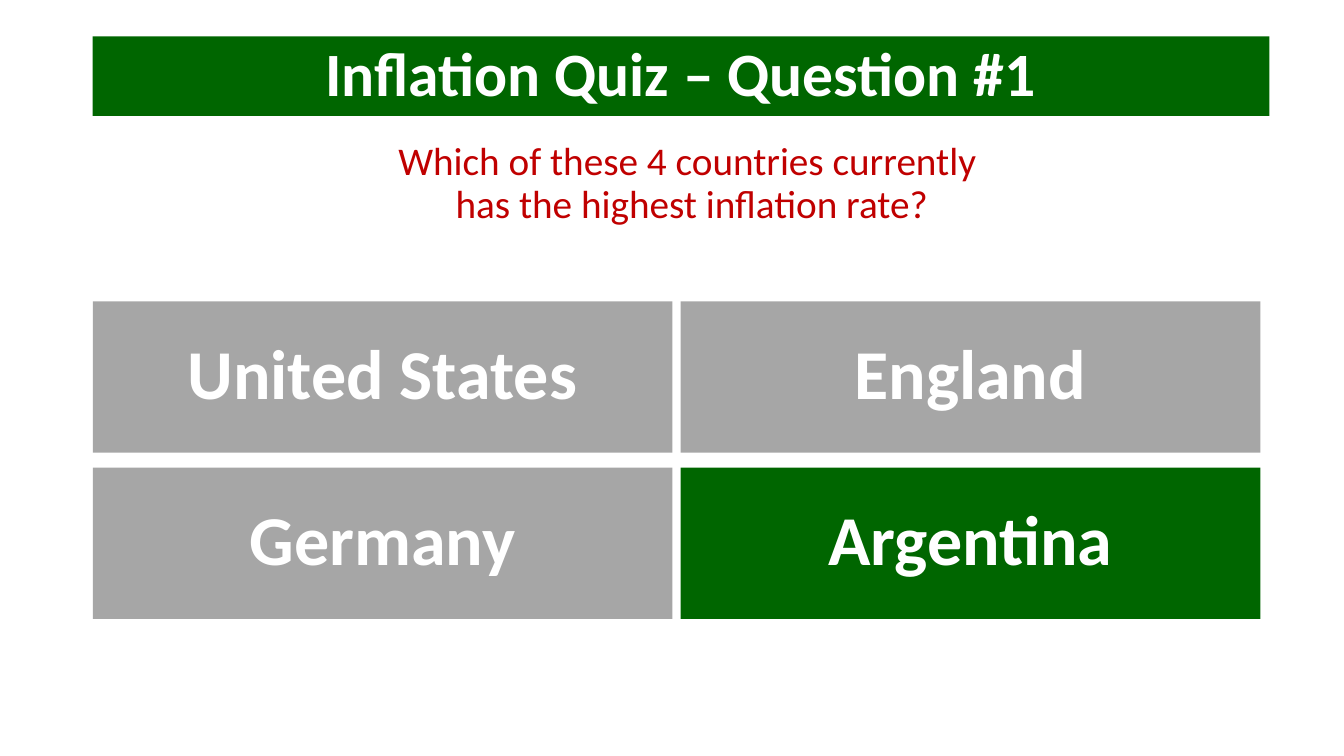
from pptx import Presentation
from pptx.dml.color import RGBColor
from pptx.enum.shapes import MSO_SHAPE as Shape
from pptx.enum.text import MSO_ANCHOR as Anchor, PP_ALIGN as Align
from pptx.util import Inches, Pt

GREEN, GRAY, RED, WHITE = "006600", "A6A6A6", "C00000", "FFFFFF"


def color(code):
    return RGBColor.from_string(code)


class Quiz:
    font = "Calibri"

    def __init__(self, slide):
        self.slide = slide

    def set_text(self, shape, text, size, ink, bold, anchor):
        frame = shape.text_frame
        frame.word_wrap = True
        frame.vertical_anchor = anchor
        frame.text = text
        para = frame.paragraphs[0]
        para.alignment = Align.CENTER
        para.line_spacing = 0.9
        style = {"name": self.font, "size": Pt(size), "bold": bold}
        for run in para.runs:
            for key, value in style.items():
                setattr(run.font, key, value)
            run.font.color.rgb = color(ink)

    def label(self, box, text, size, ink):
        shape = self.slide.shapes.add_textbox(*map(Inches, box))
        self.set_text(shape, text, size, ink, False, Anchor.TOP)

    def block(self, box, text, size, fill):
        """Draw a filled rectangle with bold white text."""
        shape = self.slide.shapes.add_shape(Shape.RECTANGLE, *map(Inches, box))
        shape.shadow.inherit = False
        shape.fill.solid()
        shape.fill.fore_color.rgb = color(fill)
        shape.line.fill.background()
        self.set_text(shape, text, size, WHITE, True, Anchor.MIDDLE)


def main():
    deck = Presentation()
    deck.slide_width, deck.slide_height = Inches(13.33), Inches(7.5)
    quiz = Quiz(deck.slides.add_slide(deck.slide_layouts[6]))

    left = 0.92
    quiz.label((left, 1.36, 11.88, 5.4),
               "Which of these 4 countries currently \vhas the highest inflation rate?",
               28, RED)

    top, wide, high = 2.99, 5.75, 1.5
    gap_x, gap_y = 0.08, 0.15
    answer = "Argentina"
    rows = [("United States", "England"), ("Germany", answer)]
    for row, names in enumerate(rows):
        for col, name in enumerate(names):
            box = (left + col * (wide + gap_x), top + row * (high + gap_y), wide, high)
            quiz.block(box, name, 50, GREEN if name == answer else GRAY)

    quiz.block((left, 0.36, 11.67, 0.79), "Inflation Quiz – Question #1", 44, GREEN)
    deck.save("out.pptx")


if __name__ == "__main__":
    main()
